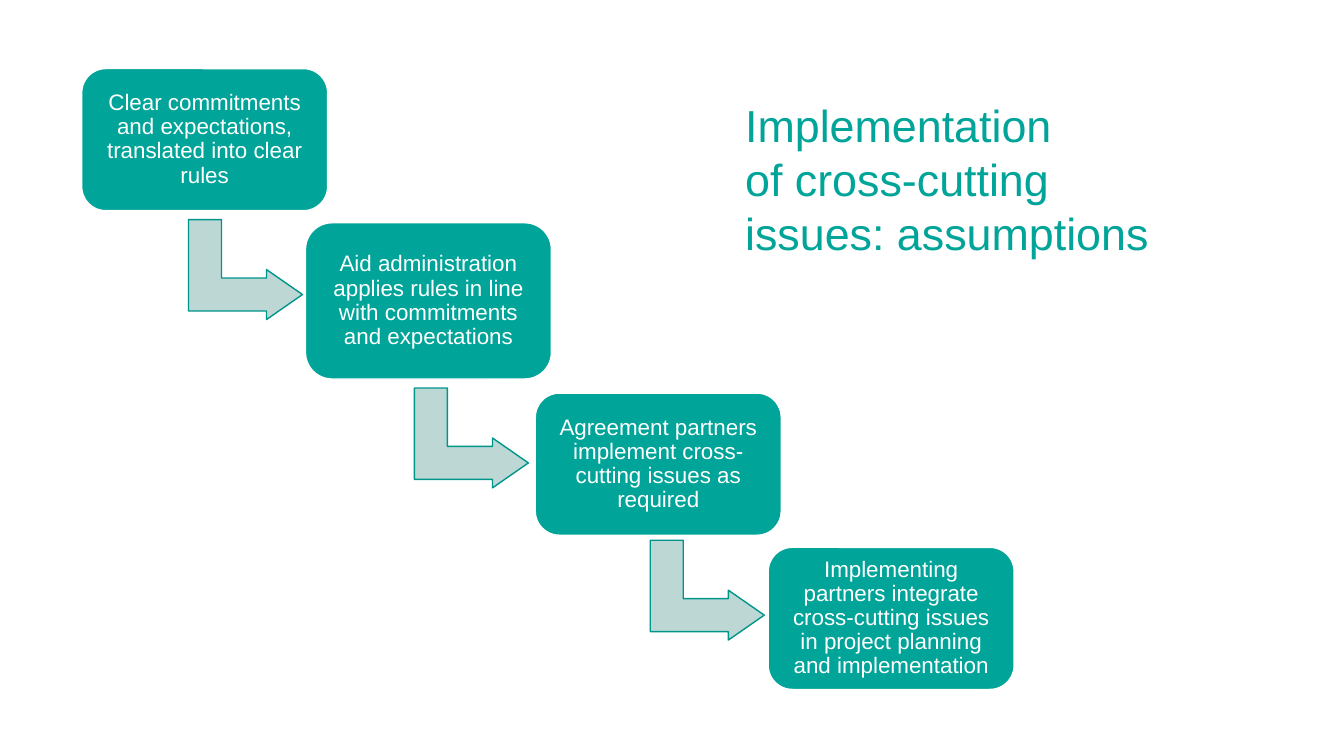
import pptx
import pptx.dml.color
import pptx.enum.shapes
import pptx.enum.text
import pptx.util

SHAPES = pptx.enum.shapes.MSO_SHAPE
ALIGN = pptx.enum.text.PP_ALIGN
ANCHOR = pptx.enum.text.MSO_ANCHOR


def color(hex_code):
    return pptx.dml.color.RGBColor.from_string(hex_code)


class Deck:
    """Style and current slide; lengths are percentages of the slide's size."""

    FONT = "Arial"
    TEAL, DARK_TEAL, PALE_TEAL, WHITE = "00A499", "00958B", "BDD8D4", "FFFFFF"

    def __init__(self):
        self.presentation = pptx.Presentation()
        self.presentation.slide_width = pptx.util.Inches(13.33)
        self.presentation.slide_height = pptx.util.Inches(7.5)
        self.slide = self.presentation.slides.add_slide(
            self.presentation.slide_layouts[5])

    def place(self, left, top, width, height):
        across = self.presentation.slide_width / 100
        down = self.presentation.slide_height / 100
        return (round(left * across), round(top * down),
                round(width * across), round(height * down))

    def set_text(self, frame, lines, size, ink, align):
        frame.word_wrap = True
        frame.text = "\n".join(lines)
        for paragraph in frame.paragraphs:
            paragraph.alignment = align
            paragraph.font.name = self.FONT
            paragraph.font.size = pptx.util.Pt(size)
            paragraph.font.color.rgb = color(ink)

    def title(self, lines, *area):
        heading = self.slide.shapes.title
        heading.left, heading.top, heading.width, heading.height = self.place(*area)
        frame = heading.text_frame
        frame.auto_size = pptx.enum.text.MSO_AUTO_SIZE.NONE
        frame.vertical_anchor = ANCHOR.TOP
        self.set_text(frame, lines, 32, self.TEAL, ALIGN.LEFT)

    def shape(self, preset, area, fill, line, adjustments):
        drawn = self.slide.shapes.add_shape(preset, *self.place(*area))
        drawn.shadow.inherit = False
        drawn.fill.solid()
        drawn.fill.fore_color.rgb = color(fill)
        drawn.line.color.rgb = color(line)
        drawn.line.width = pptx.util.Pt(1)
        for index, value in enumerate(adjustments):
            drawn.adjustments[index] = value
        return drawn

    def arrow(self, left, top):
        bend = self.shape(SHAPES.BENT_UP_ARROW, (left, top, 7.43, 15.07),
                          self.PALE_TEAL, self.DARK_TEAL, (0.33, 0.25, 0.36))
        bend.rotation = 90

    def step(self, text, left, top, height):
        box = self.shape(SHAPES.ROUNDED_RECTANGLE, (left, top, 18.3, height),
                         self.TEAL, self.WHITE, (0.17,))
        frame = box.text_frame
        frame.margin_left = frame.margin_right = pptx.util.Inches(0.07)
        frame.margin_top = frame.margin_bottom = pptx.util.Inches(0.07)
        frame.vertical_anchor = ANCHOR.MIDDLE
        self.set_text(frame, [text], 16, self.WHITE, ALIGN.CENTER)
        frame.paragraphs[0].line_spacing = 0.9


def main():
    deck = Deck()

    # Heading
    deck.title(["Implementation", "of cross-cutting issues: assumptions"],
               54.69, 12.27, 34.36, 22.93)

    # Staircase: text, left, top, height, then the arrow to the next step
    steps = [
        ("Clear commitments and expectations, translated into clear rules",
         6.08, 9.07, 18.8, (14.55, 28.13)),
        ("Aid administration applies rules in line with commitments and expectations",
         22.73, 29.47, 20.67, (31.36, 50.4)),
        ("Agreement partners implement cross-cutting issues as required",
         39.83, 52, 18.8, (48.91, 70.53)),
        ("Implementing partners integrate cross-cutting issues in project planning "
         "and implementation",
         57.16, 72.4, 18.8, None),
    ]
    for text, left, top, height, arrow_corner in steps:
        if arrow_corner:
            deck.arrow(*arrow_corner)
        deck.step(text, left, top, height)

    deck.presentation.save("out.pptx")


if __name__ == "__main__":
    main()
